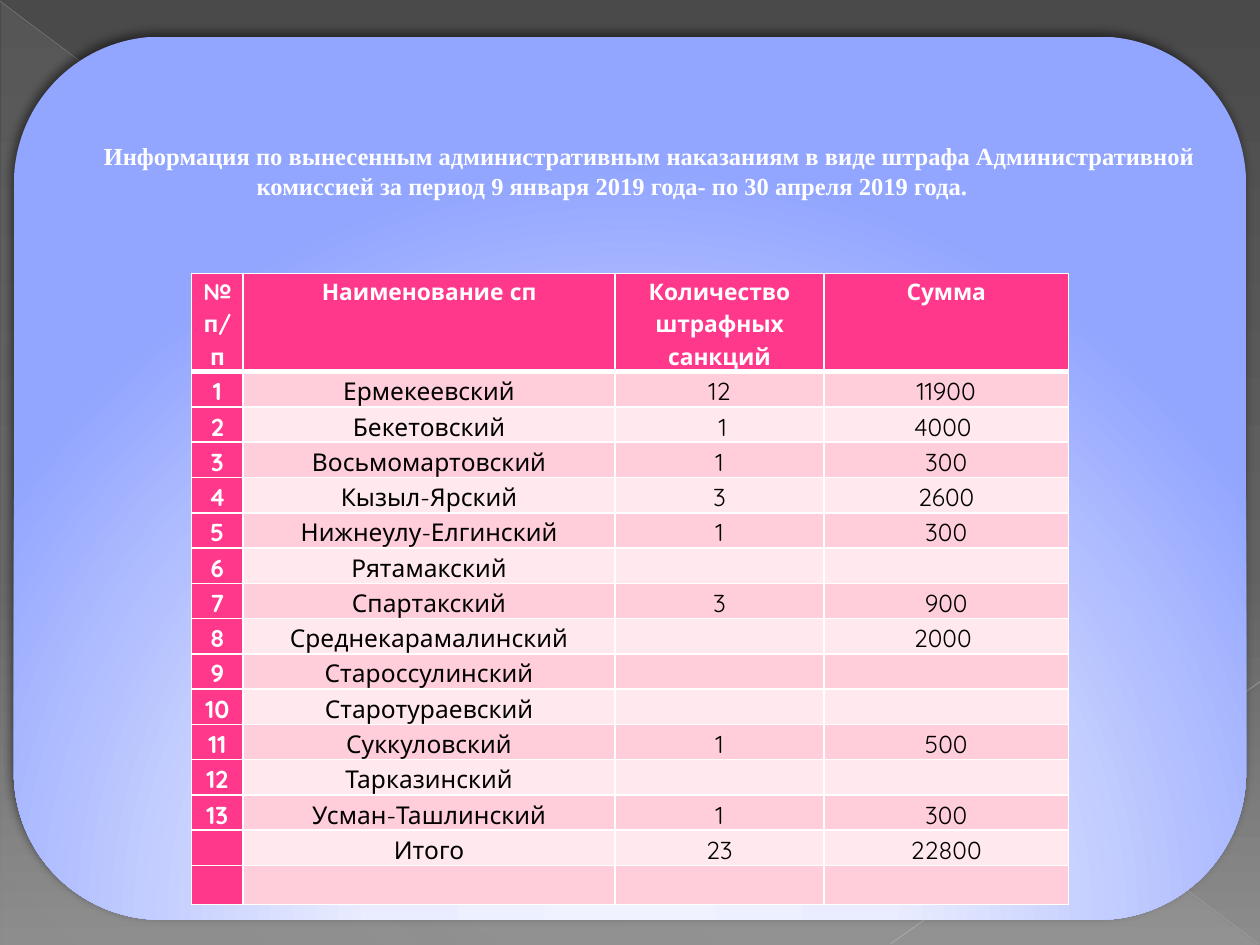
from lxml.etree import SubElement
from pptx import Presentation
from pptx.dml.color import RGBColor as RGB
from pptx.enum.shapes import MSO_CONNECTOR as CONN, MSO_SHAPE as SHAPE
from pptx.enum.text import MSO_ANCHOR as ANCHOR, PP_ALIGN as ALIGN
from pptx.oxml import parse_xml
from pptx.oxml.ns import nsdecls, qn
from pptx.util import Inches, Pt

COLORS = {
    "white": "FFFFFF", "black": "000000", "pink": "FF388C",
    "rose": "FFCEDA", "blush": "FFE8EE", "mist": "D2D2D2",
    "diagonal": "BFBFBF", "corner": "C6C6C6",
    "dark": "4A4A4A", "mid": "626262", "light": "8C8C8C",
    "pale": "F0F2FF", "haze": "EAEDFF", "blue": "92A5FF",
}
HEADER = ("№ п/п", "Наименование сп", "Количество штрафных санкций", "Сумма")
SETTLEMENTS = [
    ("Ермекеевский", "12", "11900"),
    ("Бекетовский", " 1", "4000 "),
    ("Восьмомартовский", "1", "300"),
    ("Кызыл-Ярский", "3", "2600"),
    ("Нижнеулу-Елгинский", "1", "300"),
    ("Рятамакский", "", ""),
    ("Спартакский", "3", "900"),
    ("Среднекарамалинский", "", "2000 "),
    ("Староссулинский", "", ""),
    ("Старотураевский", "", ""),
    ("Суккуловский", "1", "500"),
    ("Тарказинский", "", ""),
    ("Усман-Ташлинский", "1", "300"),
]
TITLE = ("Информация по вынесенным административным наказаниям в виде штрафа "
         "Административной комиссией за период 9 января 2019 года- "
         "по 30 апреля 2019 года.")
LINEAR = '<a:lin ang="{}" scaled="0"/>'
CIRCLE = ('<a:path path="circle"><a:fillToRect l="50000" t="155000" '
          'r="50000" b="-55000"/></a:path>')


class Deck:
    def __init__(self, prs):
        self.s = prs.slides.add_slide(prs.slide_layouts[6])
        self.font = "Quicksand"

    def gradient(self, parent, stops, direction):
        gs = "".join(
            f'<a:gs pos="{pos * 1000}"><a:srgbClr val="{COLORS[color]}">'
            f'<a:alpha val="{alpha * 1000}"/></a:srgbClr></a:gs>'
            for pos, color, alpha in stops)
        grad = parse_xml(f'<a:gradFill {nsdecls("a")} rotWithShape="1">'
                         f'<a:gsLst>{gs}</a:gsLst>{direction}</a:gradFill>')
        parent.replace(parent.find(qn("a:solidFill")), grad)

    def background(self, stops, angle):
        self.s.background.fill.solid()
        bg = self.s.element.find(".//" + qn("p:bgPr"))
        self.gradient(bg, stops, LINEAR.format(angle * 60000))

    def shape(self, kind, box, stops, direction):
        sp = self.s.shapes.add_shape(kind, *map(Inches, box))
        sp.shadow.inherit = False
        sp.fill.solid()
        sp.line.fill.background()
        self.gradient(sp.element.spPr, stops, direction)
        return sp

    def shadow(self, sp, color, alpha, blur, dist, angle):
        effects = sp.element.spPr.find(qn("a:effectLst"))
        shade = SubElement(effects, qn("a:outerShdw"), blurRad=str(Pt(blur)),
                           dist=str(Pt(dist)), dir=str(angle * 60000),
                           rotWithShape="0")
        clr = SubElement(shade, qn("a:srgbClr"), val=COLORS[color])
        SubElement(clr, qn("a:alpha"), val=str(alpha * 1000))

    def line(self, ends, color, width, alpha):
        ln = self.s.shapes.add_connector(CONN.STRAIGHT, *map(Inches, ends))
        ln.line.width = Pt(width)
        ln.line.color.rgb = RGB.from_string(COLORS[color])
        spPr = ln.element.spPr
        SubElement(spPr.find(".//" + qn("a:srgbClr")), qn("a:alpha"),
                   val=str(alpha * 1000))
        SubElement(spPr, qn("a:effectLst"))

    def run(self, p, text, color, **style):
        p.alignment = ALIGN.CENTER
        if not text:
            SubElement(p._p, qn("a:endParaRPr"), sz=str(style["size"].centipoints))
            return
        r = p.add_run()
        r.text = text
        for name, value in style.items():
            setattr(r.font, name, value)
        r.font.color.rgb = RGB.from_string(COLORS[color])

    def text(self, box, text, indent, **style):
        tf = self.s.shapes.add_textbox(*map(Inches, box)).text_frame
        tf.word_wrap = True
        tf.vertical_anchor = ANCHOR.MIDDLE
        p = tf.paragraphs[0]
        p._p.get_or_add_pPr().set("indent", str(Inches(indent)))
        self.run(p, text, "white", **style)

    def cell(self, cell, text, fill, color, bold, size, edges):
        for name, value in {"margin_left": 0.07, "margin_right": 0.07,
                            "margin_top": 0, "margin_bottom": 0}.items():
            setattr(cell, name, Inches(value))
        cell.fill.solid()
        cell.fill.fore_color.rgb = RGB.from_string(COLORS[fill])
        p = cell.text_frame.paragraphs[0]
        p.line_spacing = 1.15
        self.run(p, text, color, name=self.font, size=Pt(size), bold=bold)
        tcPr = cell._tc.get_or_add_tcPr()
        for i, (side, width) in enumerate(edges.items()):
            tcPr.insert(i, parse_xml(
                f'<a:ln{side} {nsdecls("a")} w="{Pt(width)}"><a:solidFill>'
                f'<a:srgbClr val="{COLORS["white"]}"/></a:solidFill></a:ln{side}>'))

    def table(self, left, top, widths, heights, rows):
        box = (left, top, sum(widths), sum(heights))
        tbl = self.s.shapes.add_table(len(rows), len(widths),
                                      *map(Inches, box)).table
        for col, width in zip(tbl.columns, widths):
            col.width = Inches(width)
        for i, (row, height) in enumerate(zip(rows, heights)):
            tbl.rows[i].height = Inches(height)
            edges = {"L": 1, "R": 1, "T": 3 if i == 1 else 1,
                     "B": 3 if i == 0 else 1}
            for j, text in enumerate(row):
                strong = i == 0 or j == 0
                band = "rose" if i % 2 else "blush"
                self.cell(tbl.cell(i, j), text, "pink" if strong else band,
                          "white" if strong else "black", strong,
                          14 if i else 13, edges)


def main():
    prs = Presentation()
    prs.slide_width, prs.slide_height = Inches(10), Inches(7.5)
    deck = Deck(prs)
    deck.background([(0, "dark", 100), (60, "mid", 100), (100, "light", 100)], 90)
    deck.shape(SHAPE.RIGHT_TRIANGLE, (0.01, 0.02, 9.98, 7.48),
               [(0, "mist", 10), (70, "mist", 8), (100, "mist", 1)],
               LINEAR.format(133 * 60000))
    deck.line((0, 0.01, 9.99, 7.49), "diagonal", 0.39, 35)
    deck.line((10, 5.41, 7.07, 7.49), "corner", 0.47, 45)
    panel = deck.shape(SHAPE.ROUNDED_RECTANGLE, (0.11, 0.29, 9.78, 7.01),
                       [(0, "pale", 100), (34, "haze", 100), (100, "blue", 100)],
                       CIRCLE)
    deck.shadow(panel, "black", 50, 5, 2, 245)
    rows = [HEADER]
    rows += [(str(n), *row) for n, row in enumerate(SETTLEMENTS, 1)]
    rows += [("", "Итого", "23", "22800"), ("",) * 4]
    deck.table(1.52, 2.17, (0.41, 2.95, 1.66, 1.94),
               [0.78] + [0.28] * 14 + [0.31], rows)
    deck.text((0, 1.07, 9.72, 0.57), TITLE, 0.59,
              name="Times New Roman", size=Pt(14), bold=True)
    prs.save("out.pptx")


if __name__ == "__main__":
    main()
